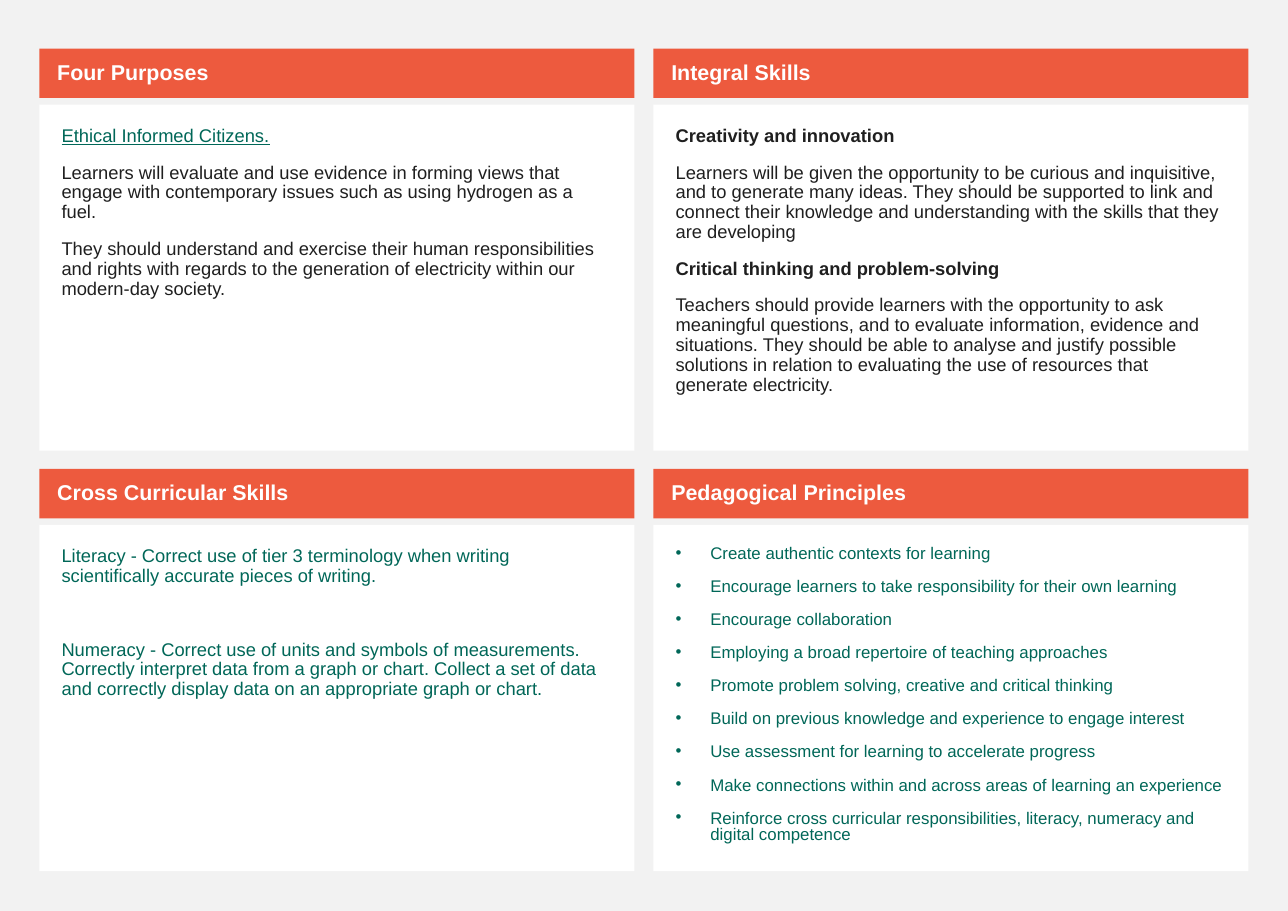
from dataclasses import dataclass

from lxml import etree
from pptx import Presentation
from pptx import util as u
from pptx.dml.color import RGBColor
from pptx.enum import shapes, text
from pptx.oxml.ns import qn


@dataclass(frozen=True)
class Theme:
    font: str = "Arial"
    backdrop: str = "F2F2F2"
    accent: str = "ED5A3E"
    white: str = "FFFFFF"
    green: str = "006758"
    ink: str = "1F1F1F"
    heading_size: int = 14
    body_size: int = 12
    list_size: int = 11
    paragraph_gap: int = 11


THEME = Theme()

LEFT, TOP = 0.91, 1.12
COLUMN_STEP, ROW_STEP = 14.16, 9.69
PANEL_WIDTH = 13.72
HEADING_HEIGHT, BODY_HEIGHT = 1.14, 7.98
BODY_OFFSET = 1.29
HEADING_INSETS = (0.41, 0.13, 0.25, 0.13)
BODY_INSETS = (0.51, 0.51, 0.51, 0.51)
BULLET_INDENT = 0.8


def add_bullet(paragraph):
    properties = paragraph._p.get_or_add_pPr()
    indent = u.Cm(BULLET_INDENT)
    properties.set("marL", str(indent))
    properties.set("indent", str(-indent))
    etree.SubElement(properties, qn("a:buFont"), typeface=THEME.font)
    etree.SubElement(properties, qn("a:buChar"), char="•")


def write(paragraph, wording, size=THEME.body_size, color=THEME.ink, bold=False,
          underline=False, bullet=False, line=0.9, before=THEME.paragraph_gap):
    paragraph.alignment = text.PP_ALIGN.LEFT
    paragraph.line_spacing = line
    paragraph.space_before = u.Pt(before)
    if bullet:
        add_bullet(paragraph)
    run = paragraph.add_run()
    run.text = wording
    run.font.name = THEME.font
    run.font.size = u.Pt(size)
    run.font.bold = bold
    run.font.underline = underline
    run.font.color.rgb = RGBColor.from_string(color)


class PanelSlide:
    def __init__(self, slide):
        self.slide = slide
        background = slide.background.fill
        background.solid()
        background.fore_color.rgb = RGBColor.from_string(THEME.backdrop)

    def block(self, left, top, height, fill, insets, anchor, paragraphs):
        """Draw a filled box and write (wording, format) pairs in it."""
        box = self.slide.shapes.add_shape(
            shapes.MSO_SHAPE.RECTANGLE,
            u.Cm(left), u.Cm(top), u.Cm(PANEL_WIDTH), u.Cm(height))
        box.shadow.inherit = False
        box.fill.solid()
        box.fill.fore_color.rgb = RGBColor.from_string(fill)
        box.line.fill.background()
        frame = box.text_frame
        frame.word_wrap = True
        frame.vertical_anchor = anchor
        (frame.margin_left, frame.margin_top,
         frame.margin_right, frame.margin_bottom) = map(u.Cm, insets)
        for index, (wording, style) in enumerate(paragraphs):
            paragraph = frame.add_paragraph() if index else frame.paragraphs[0]
            write(paragraph, wording, **style)

    def heading(self, left, top, title):
        style = dict(size=THEME.heading_size, color=THEME.white, bold=True)
        self.block(left, top, HEADING_HEIGHT, THEME.accent, HEADING_INSETS,
                   text.MSO_ANCHOR.MIDDLE, [(title, style)])

    def body(self, left, top, paragraphs):
        self.block(left, top, BODY_HEIGHT, THEME.white, BODY_INSETS,
                   text.MSO_ANCHOR.TOP, paragraphs)

    def panel(self, column, row, title, paragraphs):
        left = LEFT + column * COLUMN_STEP
        top = TOP + row * ROW_STEP
        self.heading(left, top, title)
        self.body(left, top + BODY_OFFSET, paragraphs)


PLAIN = {}
STRONG = dict(bold=True)
GREEN = dict(color=THEME.green)
PRINCIPLE = dict(color=THEME.green, size=THEME.list_size, bullet=True, line=0.8)

FOUR_PURPOSES = [
    ("Ethical Informed Citizens.", dict(color=THEME.green, underline=True)),
    ("Learners will evaluate and use evidence in forming views that engage with "
     "contemporary issues such as using hydrogen as a fuel.", PLAIN),
    ("They should understand and exercise their human responsibilities and "
     "rights with regards to the generation of electricity within "
     "our modern-day society.", PLAIN),
]
INTEGRAL_SKILLS = [
    ("Creativity and innovation", STRONG),
    ("Learners will be given the opportunity to be curious and inquisitive, and "
     "to generate many ideas. They should be supported to link and connect their "
     "knowledge and understanding with the skills that they are developing", PLAIN),
    ("Critical thinking and problem-solving", STRONG),
    ("Teachers should provide learners with the opportunity to ask meaningful "
     "questions, and to evaluate information, evidence and situations. They "
     "should be able to analyse and justify possible solutions in relation to "
     "evaluating the use of resources that generate electricity.", PLAIN),
]
CROSS_CURRICULAR_SKILLS = [
    ("Literacy - Correct use of tier 3 terminology when writing scientifically "
     "accurate pieces of writing.", GREEN),
    ("Numeracy - Correct use of units and symbols of measurements. Correctly "
     "interpret data from a graph or chart. Collect a set of data and correctly "
     "display data on an appropriate graph or chart.", dict(GREEN, before=35)),
]
PEDAGOGICAL_PRINCIPLES = [(principle, PRINCIPLE) for principle in (
    "Create authentic contexts for learning",
    "Encourage learners to take responsibility for their own learning",
    "Encourage collaboration",
    "Employing a broad repertoire of teaching approaches",
    "Promote problem solving, creative and critical thinking",
    "Build on previous knowledge and experience to engage interest",
    "Use assessment for learning to accelerate progress",
    "Make connections within and across areas of learning an experience",
    "Reinforce cross curricular responsibilities, literacy, numeracy and "
    "digital competence",
)]


def main():
    deck = Presentation()
    deck.slide_width, deck.slide_height = u.Cm(29.7), u.Cm(21)
    page = PanelSlide(deck.slides.add_slide(deck.slide_layouts[6]))
    page.panel(0, 0, "Four Purposes", FOUR_PURPOSES)
    page.panel(1, 0, "Integral Skills", INTEGRAL_SKILLS)
    page.panel(0, 1, "Cross Curricular Skills", CROSS_CURRICULAR_SKILLS)
    page.panel(1, 1, "Pedagogical Principles", PEDAGOGICAL_PRINCIPLES)
    deck.save("out.pptx")


if __name__ == "__main__":
    main()
